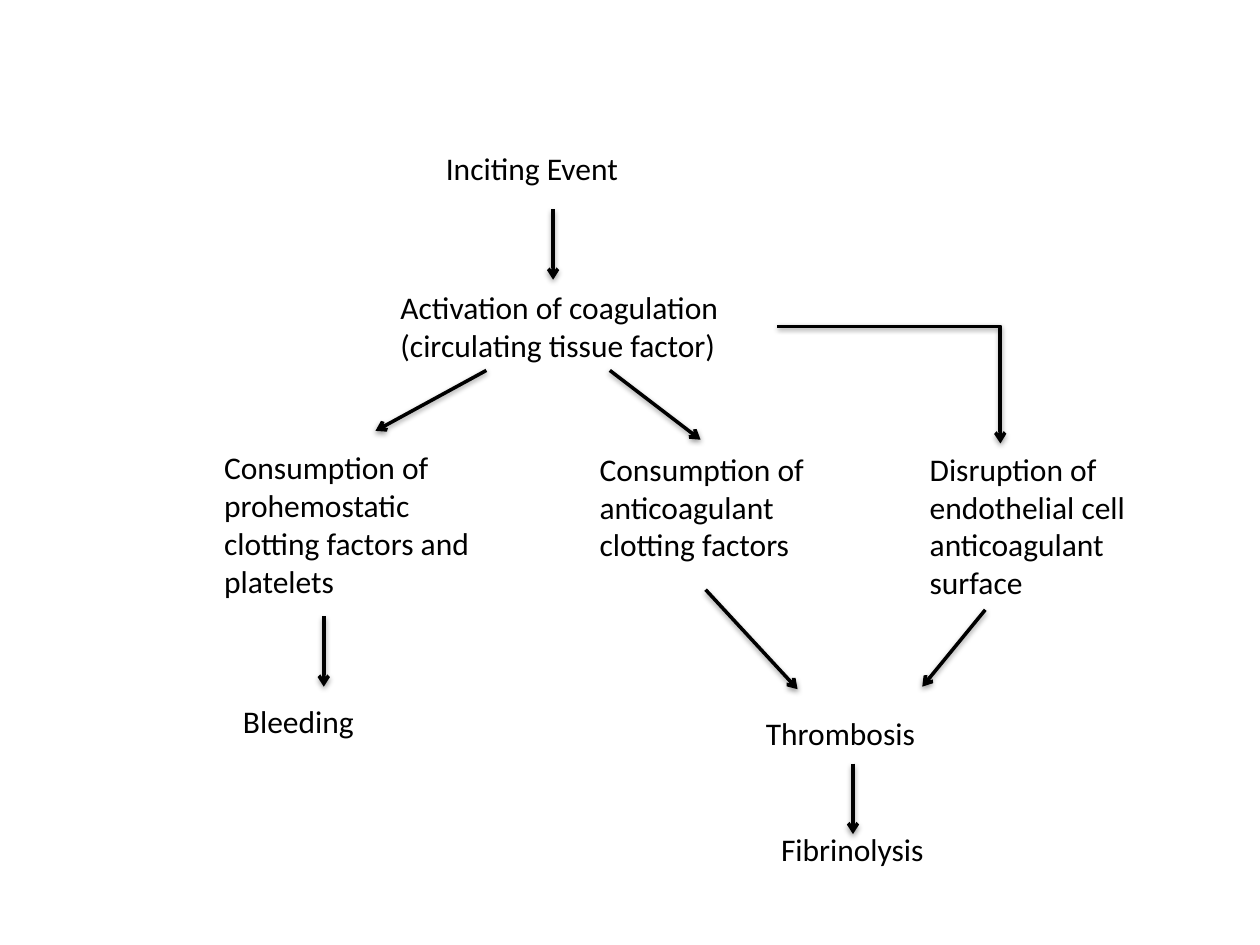
from dataclasses import dataclass

from lxml.etree import SubElement
from pptx import Presentation
from pptx.dml.color import RGBColor
from pptx.enum.shapes import MSO_CONNECTOR as Link
from pptx.enum.text import MSO_AUTO_SIZE as AutoSize
from pptx.oxml import parse_xml
from pptx.oxml.ns import nsdecls, qn
from pptx.util import Inches, Pt


@dataclass(frozen=True)
class Theme:
    ink: RGBColor = RGBColor(0, 0, 0)
    font: str = "Calibri"
    text_size: int = 18
    line_width: int = 2
    shadow_blur: int = 40000
    shadow_distance: int = 20000
    shadow_opacity: int = 38000


THEME = Theme()
COLUMNS, ROWS = 100, 75
SLIDE_WIDTH, SLIDE_HEIGHT = Inches(10), Inches(7.5)

# Text, then left column, top row, columns wide, rows high
STEPS = [
    ("Inciting Event", 34.4, 11.3, 19.5, 4),
    ("Activation of coagulation (circulating tissue factor)", 30.8, 22.4, 30.8, 7.1),
    ("Consumption of prohemostatic clotting factors and platelets", 16.8, 35.1, 21.9, 13.1),
    ("Consumption of anticoagulant clotting factors", 46.6, 35.2, 21.9, 10.1),
    ("Disruption of endothelial cell anticoagulant surface", 72.8, 35.2, 19.1, 13.1),
    ("Bleeding", 18.3, 55.2, 16.1, 4),
    ("Thrombosis", 59.8, 56.2, 17.4, 4),
    ("Fibrinolysis", 61, 65.4, 15.1, 4),
]

# Short vertical arrows share one length: column, top row
DROP_LENGTH = 5.6
DROPS = [(43.9, 16.6), (25.7, 48.9), (67.7, 60.6)]

# Slanted arrows: start column and row, end column and row
SLANTS = [
    (38.6, 29.4, 29.8, 34.2),
    (48.4, 29.4, 55.6, 34.9),
    (78.2, 48.4, 73.2, 54.5),
    (56, 46.8, 63.3, 54.7),
]
BEND = (61.7, 25.9, 79.4, 35.2)
BEND_SHARE = 99900


def column(count):
    return round(SLIDE_WIDTH * count / COLUMNS)


def row(count):
    return round(SLIDE_HEIGHT * count / ROWS)


def set_format(target, values):
    for name, value in values.items():
        setattr(target, name, value)


def add_step(page, text, left, top, width, height):
    box = page.shapes.add_textbox(column(left), row(top), column(width), row(height))
    frame = box.text_frame
    set_format(frame, {"word_wrap": True, "auto_size": AutoSize.SHAPE_TO_FIT_TEXT})
    span = frame.paragraphs[0].add_run()
    span.text = text
    set_format(span.font, {"name": THEME.font, "size": Pt(THEME.text_size)})
    span.font.color.rgb = THEME.ink


def add_arrow(page, start_x, start_y, end_x, end_y, kind=Link.STRAIGHT):
    arrow = page.shapes.add_connector(
        kind, column(start_x), row(start_y), column(end_x), row(end_y))
    arrow.line.width = Pt(THEME.line_width)
    arrow.line.color.rgb = THEME.ink
    # Open arrowhead and soft shadow below the line
    properties = arrow._element.spPr
    SubElement(properties.find(qn("a:ln")), qn("a:tailEnd"), type="arrow")
    properties.append(parse_xml(
        f'<a:effectLst {nsdecls("a")}>'
        f'<a:outerShdw blurRad="{THEME.shadow_blur}" dist="{THEME.shadow_distance}"'
        ' dir="5400000" rotWithShape="0">'
        f'<a:srgbClr val="{THEME.ink}"><a:alpha val="{THEME.shadow_opacity}"/></a:srgbClr>'
        '</a:outerShdw></a:effectLst>'))
    return arrow


def add_bent_arrow(page, ends, share):
    arrow = add_arrow(page, *ends, kind=Link.ELBOW)
    guides = arrow._element.spPr.find(qn("a:prstGeom")).find(qn("a:avLst"))
    SubElement(guides, qn("a:gd"), name="adj1", fmla=f"val {share}")


def main():
    deck = Presentation()
    set_format(deck, {"slide_width": SLIDE_WIDTH, "slide_height": SLIDE_HEIGHT})
    page = deck.slides.add_slide(deck.slide_layouts[6])

    # Steps of the cascade
    for step in STEPS:
        add_step(page, *step)

    # Arrows between the steps
    for x, top in DROPS:
        add_arrow(page, x, top, x, top + DROP_LENGTH)
    for ends in SLANTS:
        add_arrow(page, *ends)
    add_bent_arrow(page, BEND, BEND_SHARE)

    deck.save("out.pptx")


if __name__ == "__main__":
    main()
